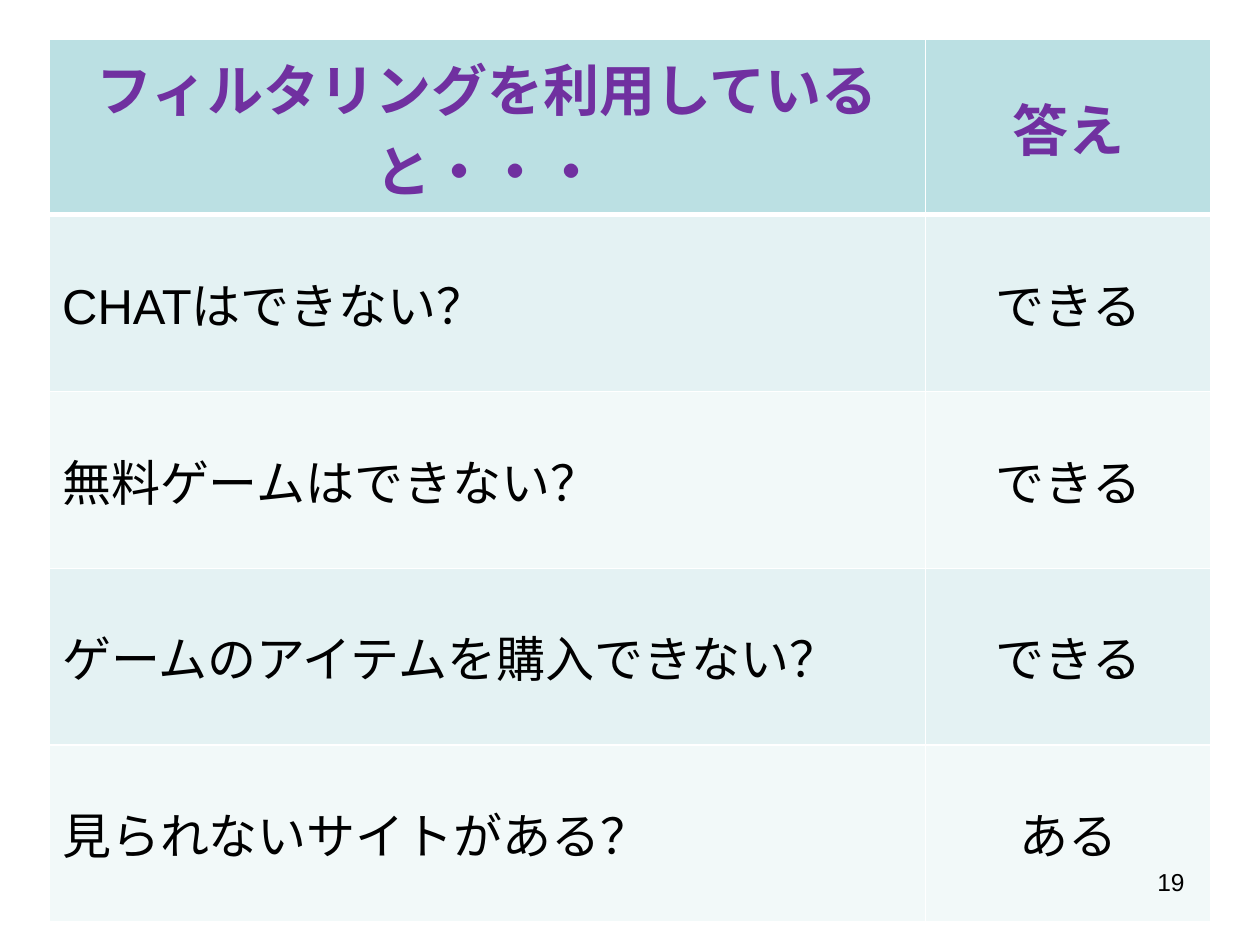
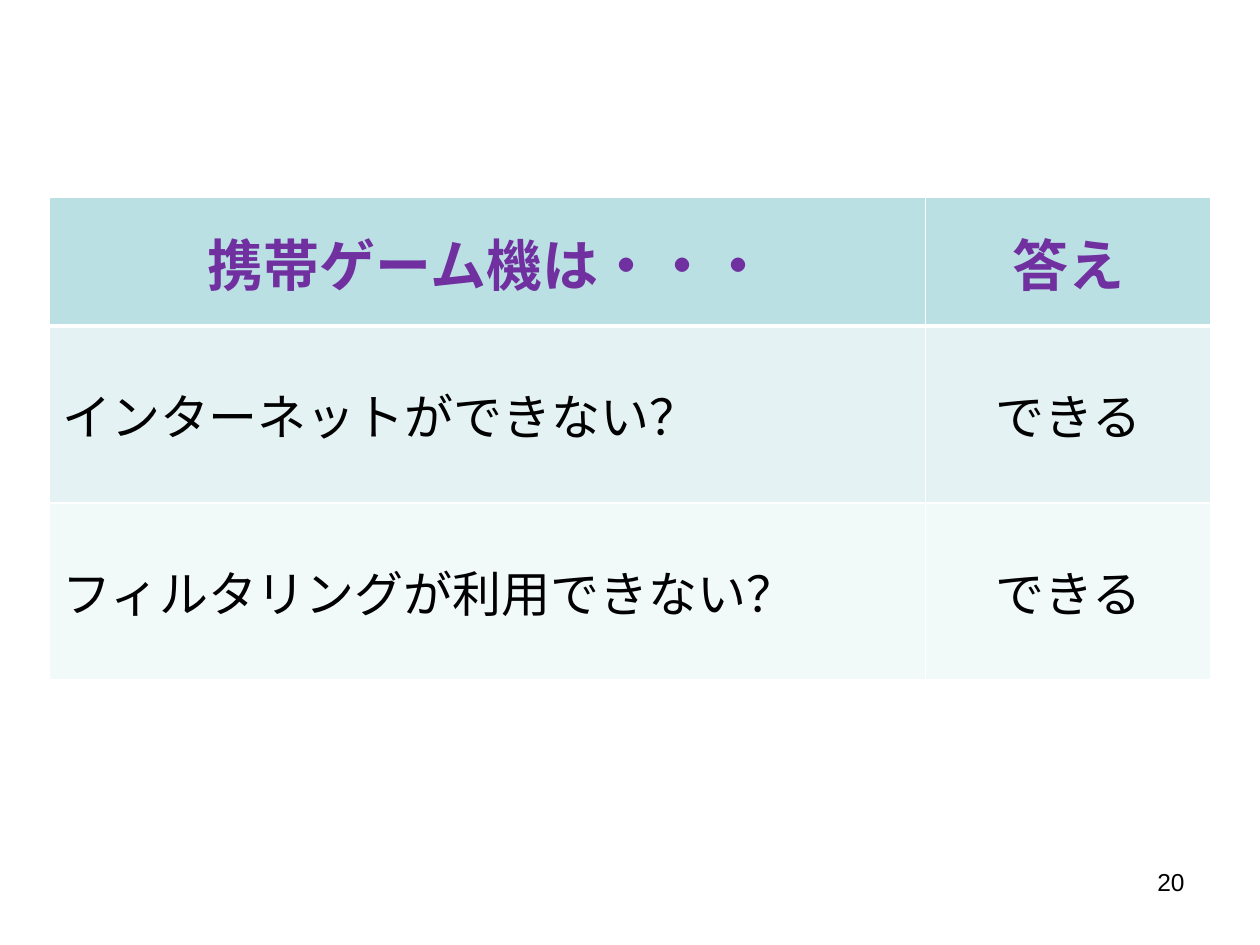
from lxml import etree
from pptx import Presentation
from pptx import util as u
from pptx.dml import color
from pptx.enum import text
from pptx.oxml import ns

FONT = "Arial"
WHITE, BLACK, PURPLE = "FFFFFF", "000000", "7030A0"
HEADER_FILL = "BBE0E3"
BAND_FILLS = ("E4F2F3", "F2F9F9")
TABLE_LEFT = 28.35
COLUMN_WIDTHS = (500.4, 163.4)
HEADER_HEIGHT, ROW_HEIGHT = 73.7, 101
ANSWER_HEADING = "答え"


def rgb(value):
    return color.RGBColor.from_string(value)


def add_span(para, words, size, ink, bold=False):
    span = para.add_run()
    span.text = words
    span.font.name = FONT
    span.font.size = u.Pt(size)
    span.font.bold = bold
    span.font.color.rgb = rgb(ink)


def add_borders(cell, top=1, bottom=1):
    properties = cell._tc.get_or_add_tcPr()
    for side, width in (("L", 1), ("R", 1), ("T", top), ("B", bottom)):
        line = etree.SubElement(properties, ns.qn(f"a:ln{side}"), w=str(u.Pt(width)))
        fill = etree.SubElement(line, ns.qn("a:solidFill"))
        etree.SubElement(fill, ns.qn("a:srgbClr"), val=WHITE)


def fill_cell(cell, words, row, column):
    is_header = row == 0
    add_borders(cell, top=3 if row == 1 else 1, bottom=3 if is_header else 1)
    cell.fill.solid()
    cell.fill.fore_color.rgb = rgb(HEADER_FILL if is_header else BAND_FILLS[(row - 1) % 2])
    cell.vertical_anchor = text.MSO_ANCHOR.MIDDLE
    para = cell.text_frame.paragraphs[0]
    centred = is_header or column == 1
    para.alignment = text.PP_ALIGN.CENTER if centred else text.PP_ALIGN.LEFT
    if is_header:
        add_span(para, words, 32, PURPLE, bold=True)
    else:
        add_span(para, words, 28, BLACK)


def add_answer_table(page, top, heading, answers):
    rows = [(heading, ANSWER_HEADING), *answers]
    height = HEADER_HEIGHT + ROW_HEIGHT * len(answers)
    table = page.shapes.add_table(
        len(rows), len(COLUMN_WIDTHS), u.Pt(TABLE_LEFT), u.Pt(top),
        u.Pt(sum(COLUMN_WIDTHS)), u.Pt(height)).table
    for column, width in zip(table.columns, COLUMN_WIDTHS):
        column.width = u.Pt(width)
    for row, entries in enumerate(rows):
        table.rows[row].height = u.Pt(ROW_HEIGHT if row else HEADER_HEIGHT)
        for column, words in enumerate(entries):
            fill_cell(table.cell(row, column), words, row, column)


def add_page_number(page, number):
    box = page.shapes.add_textbox(u.Pt(516), u.Pt(491.75), u.Pt(168), u.Pt(37.5))
    box.text_frame.word_wrap = True
    para = box.text_frame.paragraphs[0]
    para.alignment = text.PP_ALIGN.RIGHT
    add_span(para, str(number), 14, BLACK)


def add_page(deck, number, top, heading, answers):
    page = deck.slides.add_slide(deck.slide_layouts[6])
    page.background.fill.solid()
    page.background.fill.fore_color.rgb = rgb(WHITE)
    add_answer_table(page, top, heading, answers)
    add_page_number(page, number)


def main():
    deck = Presentation()
    deck.slide_width, deck.slide_height = u.Pt(720), u.Pt(540)
    add_page(deck, 19, 22.65, "フィルタリングを利用していると・・・", [
        ("CHATはできない？", "できる"),
        ("無料ゲームはできない？", "できる"),
        ("ゲームのアイテムを購入できない？", "できる"),
        ("見られないサイトがある？", "ある"),
    ])
    add_page(deck, 20, 112.65, "携帯ゲーム機は・・・", [
        ("インターネットができない？", "できる"),
        ("フィルタリングが利用できない？", "できる"),
    ])
    deck.save("out.pptx")


if __name__ == "__main__":
    main()
